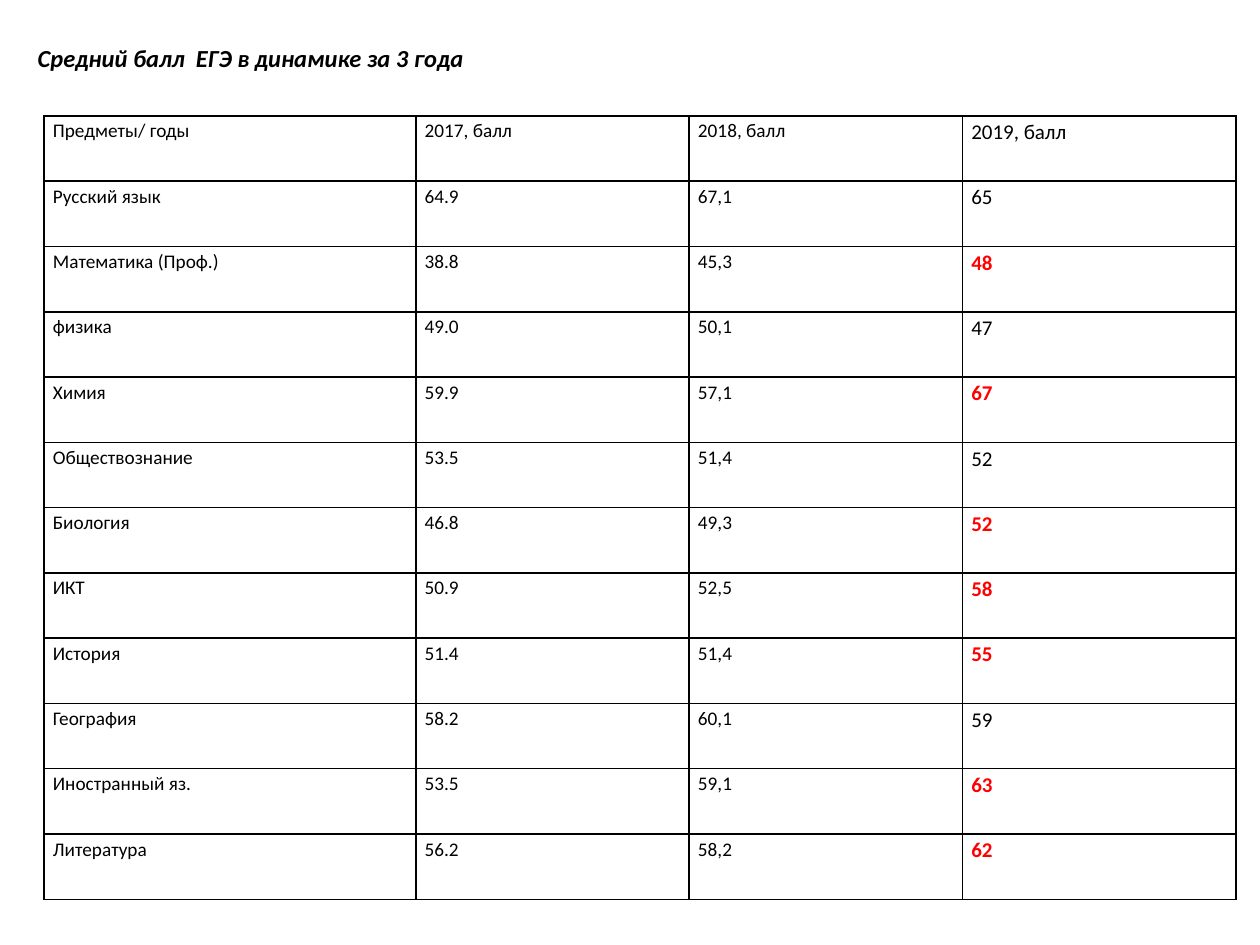
"""Build a slide with a table of average exam scores over three years."""
import pptx
import pptx.dml.color
import pptx.enum.text
import pptx.oxml
import pptx.oxml.ns
import pptx.util

Inches = pptx.util.Inches
Pt = pptx.util.Pt


def rgb(value):
    return pptx.dml.color.RGBColor.from_string(value)


def add_text(tf, text, size=11, color="000000", bold=False, italic=False, spacing=None, after=None):
    p = tf.paragraphs[0]
    p.line_spacing = spacing
    p.space_after = after
    r = p.add_run()
    r.text = text
    r.font.name = "Calibri"
    r.font.size = Pt(size)
    r.font.bold = bold
    r.font.italic = italic
    r.font.color.rgb = rgb(color)


rows = [
    ("Предметы/ годы", "2017, балл", "2018, балл", "2019, балл"),
    ("Русский язык", "64.9", "67,1", "65"),
    ("Математика (Проф.)", "38.8", "45,3", "48"),
    ("физика", "49.0", "50,1", "47"),
    ("Химия", "59.9", "57,1", "67"),
    ("Обществознание", "53.5", "51,4", "52"),
    ("Биология", "46.8", "49,3", "52"),
    ("ИКТ", "50.9", "52,5", "58"),
    ("История", "51.4", "51,4", "55"),
    ("География", "58.2", "60,1", "59"),
    ("Иностранный яз.", "53.5", "59,1", "63"),
    ("Литература", "56.2", "58,2", "62"),
]
highlighted = {"Математика (Проф.)", "Химия", "Биология", "ИКТ", "История", "Иностранный яз.", "Литература"}
widths = [2.95, 2.17, 2.17, 2.17]
height = 6.22

prs = pptx.Presentation()
prs.slide_width = Inches(10)
prs.slide_height = Inches(7.5)
s = prs.slides.add_slide(prs.slide_layouts[6])

table = s.shapes.add_table(
    len(rows), len(widths), Inches(0.35), Inches(0.92), Inches(sum(widths)), Inches(height)
).table
table.first_row = False
table.horz_banding = False
for column, width in zip(table.columns, widths):
    column.width = Inches(width)

for i, row in enumerate(rows):
    table.rows[i].height = Inches(height / len(rows))
    for j, text in enumerate(row):
        cell = table.cell(i, j)
        cell.margin_left = cell.margin_right = Inches(0.07)
        cell.margin_top = cell.margin_bottom = 0
        last = j == len(widths) - 1
        red = last and row[0] in highlighted
        add_text(cell.text_frame, text, size=12 if last else 11, color="FF0000" if red else "000000",
                 bold=red, spacing=1.15, after=Pt(10))
        tcPr = cell._tc.get_or_add_tcPr()
        for side in ("lnL", "lnR", "lnT", "lnB"):
            tcPr.append(pptx.oxml.parse_xml(
                f'<a:{side} {pptx.oxml.ns.nsdecls("a")} w="{Pt(1)}"><a:solidFill>'
                f'<a:srgbClr val="000000"/></a:solidFill></a:{side}>'))
        cell.fill.background()

sp = s.shapes.add_textbox(Inches(0.2), Inches(0.29), Inches(3.61), Inches(0.34))
tf = sp.text_frame
tf.word_wrap = False
tf.auto_size = pptx.enum.text.MSO_AUTO_SIZE.SHAPE_TO_FIT_TEXT
tf.vertical_anchor = pptx.enum.text.MSO_ANCHOR.MIDDLE
add_text(tf, "Средний балл  ЕГЭ в динамике за 3 года", size=14, bold=True, italic=True)

prs.save("out.pptx")
